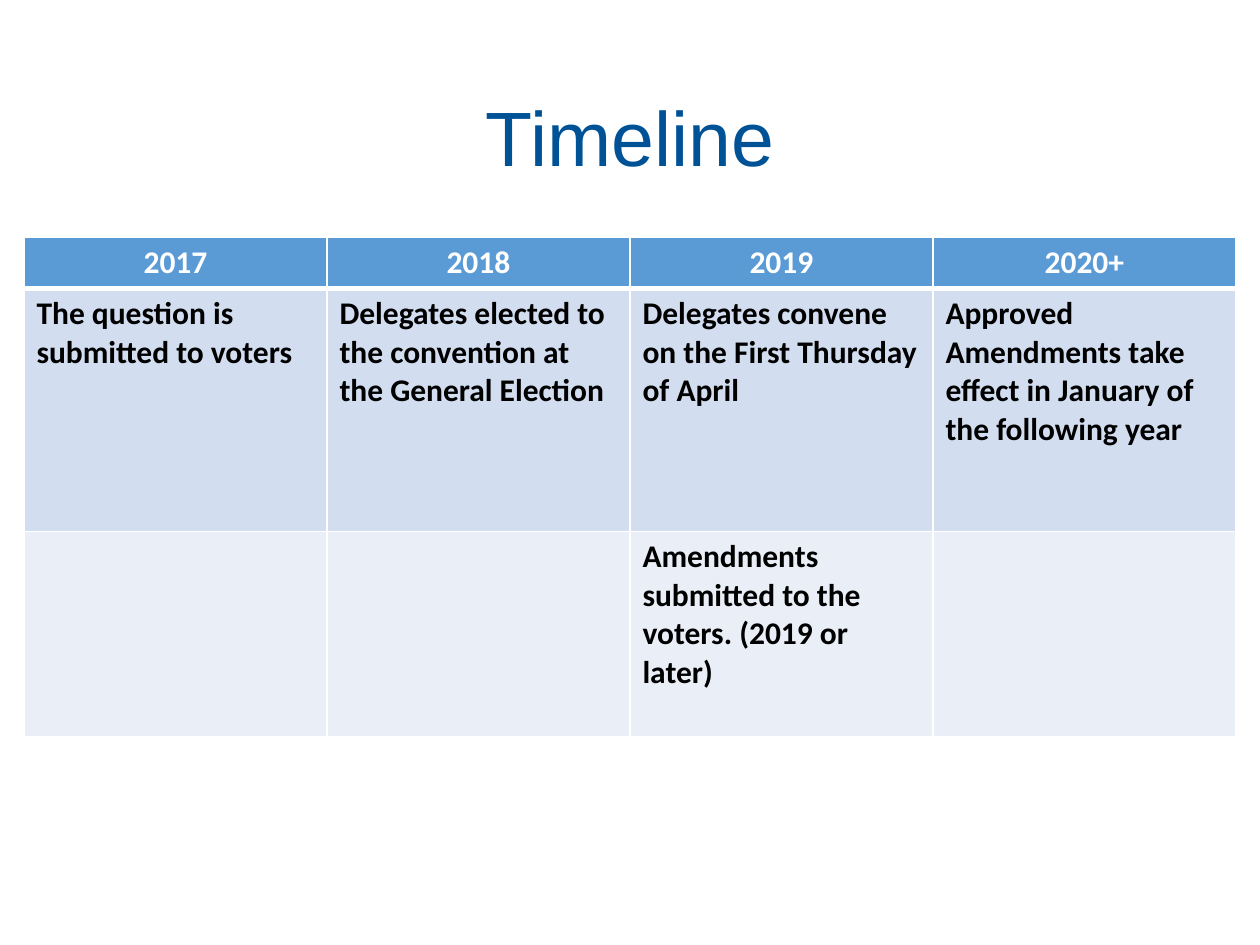
from dataclasses import dataclass

from lxml.etree import SubElement
from pptx import Presentation
from pptx.dml.color import RGBColor
from pptx.enum.text import MSO_ANCHOR, PP_ALIGN
from pptx.oxml.ns import qn
from pptx.util import Inches, Pt


@dataclass(frozen=True)
class Theme:
    title_font: str = "Arial"
    body_font: str = "Calibri"
    title_size: int = 44
    body_size: int = 18
    title: str = "005296"
    accent: str = "5B9BD5"
    white: str = "FFFFFF"
    black: str = "000000"
    row_fills: tuple = ("5B9BD5", "D2DEEF", "EAEFF7")


THEME = Theme()

TIMELINE = [
    ["2017", "2018", "2019", "2020+"],
    [
        "The question is submitted to voters",
        "Delegates elected to the convention at the General Election",
        "Delegates convene on the First Thursday of April",
        "Approved Amendments take effect in January of the following year",
    ],
    ["", "", "Amendments submitted to the voters. (2019 or later)", ""],
]
ROW_HEIGHTS = [0.41, 1.93, 1.63]


def add_line(parent, tag, color, points):
    """Append a solid line of the given tag to an XML properties element."""
    line = SubElement(parent, qn(tag), w=str(Pt(points)))
    fill = SubElement(line, qn("a:solidFill"))
    SubElement(fill, qn("a:srgbClr"), val=color)
    return line


def style_font(font, name, size, color, bold=False):
    font.name, font.size, font.bold = name, Pt(size), bold
    font.color.rgb = RGBColor.from_string(color)


def add_title(slide, left, top, width, height):
    frame = slide.shapes.add_textbox(left, top, width, height).text_frame
    frame.word_wrap = True
    frame.vertical_anchor = MSO_ANCHOR.MIDDLE
    heading = frame.paragraphs[0]
    heading.alignment = PP_ALIGN.CENTER
    heading.line_spacing = 0.9
    run = heading.add_run()
    run.text = "Timeline"
    style_font(heading.font, THEME.title_font, THEME.title_size, THEME.title)
    style_font(run.font, THEME.title_font, THEME.title_size, THEME.title)
    # The letter outline comes first among the run properties
    properties = run._r.get_or_add_rPr()
    properties.insert(0, add_line(properties, "a:ln", THEME.accent, 0.75))


def style_cell(cell, row):
    # Borders come before the fill; a heavier rule closes the header
    properties = cell._tc.get_or_add_tcPr()
    rule_widths = {"L": 1, "R": 1, "T": 3 if row == 1 else 1, "B": 3 if row == 0 else 1}
    for side, points in rule_widths.items():
        add_line(properties, f"a:ln{side}", THEME.white, points)
    cell.fill.solid()
    cell.fill.fore_color.rgb = RGBColor.from_string(THEME.row_fills[row])

    paragraph = cell.text_frame.paragraphs[0]
    paragraph.alignment = PP_ALIGN.CENTER if row == 0 else PP_ALIGN.LEFT
    color = THEME.white if row == 0 else THEME.black
    style_font(paragraph.font, THEME.body_font, THEME.body_size, color, bold=True)


def add_timeline(slide, left, top, width):
    column_count = len(TIMELINE[0])
    table = slide.shapes.add_table(
        len(TIMELINE), column_count, left, top, width, Inches(sum(ROW_HEIGHTS))
    ).table
    for column in table.columns:
        column.width = width // column_count
    for row, (height, entries) in enumerate(zip(ROW_HEIGHTS, TIMELINE)):
        table.rows[row].height = Inches(height)
        for column, entry in enumerate(entries):
            cell = table.cell(row, column)
            cell.text = entry
            style_cell(cell, row)


def main():
    deck = Presentation()
    deck.slide_width, deck.slide_height = Inches(10), Inches(7.5)
    slide = deck.slides.add_slide(deck.slide_layouts[6])
    add_title(slide, Inches(0.69), Inches(0.4), Inches(8.62), Inches(1.45))
    add_timeline(slide, Inches(0.19), Inches(1.88), Inches(9.62))
    deck.save("out.pptx")


if __name__ == "__main__":
    main()
